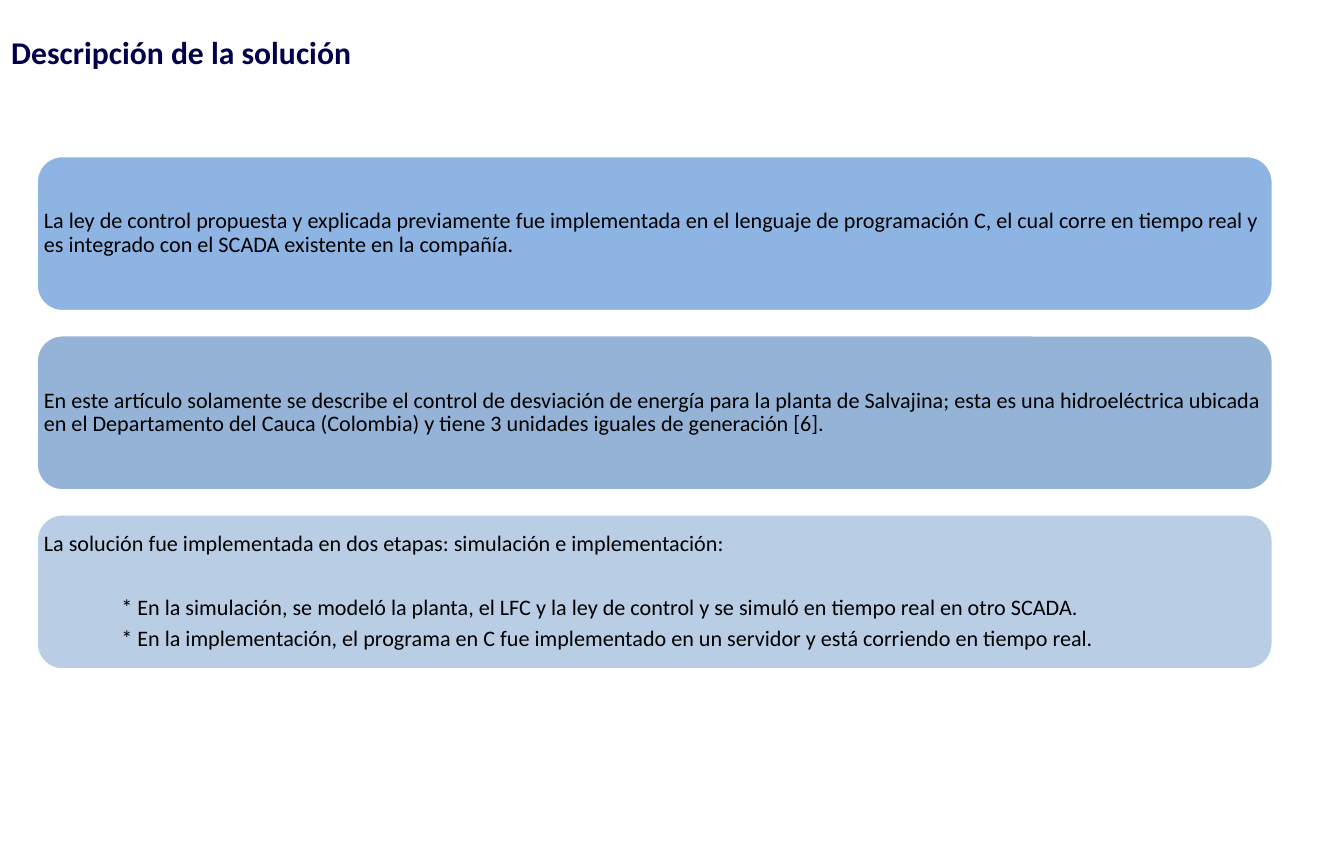
from pptx import Presentation
from pptx.dml.color import RGBColor
from pptx.enum.shapes import MSO_SHAPE
from pptx.enum.text import MSO_ANCHOR, PP_ALIGN
from pptx.util import Pt

FONT = "Calibri"
NAVY = RGBColor(0x00, 0x00, 0x4C)
BLACK = RGBColor(0x00, 0x00, 0x00)
WHITE = RGBColor(0xFF, 0xFF, 0xFF)
SKY_BLUE = RGBColor(0x8E, 0xB4, 0xE3)
STEEL_BLUE = RGBColor(0x95, 0xB3, 0xD7)
PALE_BLUE = RGBColor(0xB9, 0xCD, 0xE5)

PANEL_LEFT, PANEL_TOP = 23, 98.6
PANEL_WIDTH, PANEL_HEIGHT = 782.6, 98.6
PANEL_PITCH = 113.4
STEP_INDENT = 49
PARAGRAPH_GAP = 4.9
INTRO_GAP = 25.2

# Each panel: fill, main text, indented steps
PANELS = [
    (SKY_BLUE,
     "La ley de control propuesta y explicada previamente fue implementada en el "
     "lenguaje de programación C, el cual corre en tiempo real y es integrado con "
     "el SCADA existente en la compañía.", []),
    (STEEL_BLUE,
     "En este artículo solamente se describe el control de desviación de energía "
     "para la planta de Salvajina; esta es una hidroeléctrica ubicada en el "
     "Departamento del Cauca (Colombia) y tiene 3 unidades iguales de generación [6].",
     []),
    (PALE_BLUE,
     "La solución fue implementada en dos etapas: simulación e implementación:",
     ["* En la simulación, se modeló la planta, el LFC y la ley de control y se "
      "simuló en tiempo real en otro SCADA.",
      "* En la implementación, el programa en C fue implementado en un servidor y "
      "está corriendo en tiempo real."]),
]


def set_font(paragraph, size, color, bold=False):
    font = paragraph.font
    font.name = FONT
    font.size = Pt(size)
    font.bold = bold
    font.color.rgb = color


def add_title(slide, text):
    box = slide.shapes.add_textbox(Pt(0), Pt(0), Pt(616.3), Pt(84.2))
    frame = box.text_frame
    frame.word_wrap = True
    frame.vertical_anchor = MSO_ANCHOR.MIDDLE
    # The deeper bottom margin lifts the line above the middle of the box
    frame.margin_bottom = Pt(22)
    paragraph = frame.paragraphs[0]
    paragraph.text = text
    set_font(paragraph, 20, NAVY, bold=True)


def add_panel(slide, top, fill, text, steps):
    shape = slide.shapes.add_shape(
        MSO_SHAPE.ROUNDED_RECTANGLE,
        Pt(PANEL_LEFT), Pt(top), Pt(PANEL_WIDTH), Pt(PANEL_HEIGHT))
    shape.shadow.inherit = False
    shape.fill.solid()
    shape.fill.fore_color.rgb = fill
    shape.line.color.rgb = WHITE
    shape.line.width = Pt(2)

    frame = shape.text_frame
    frame.word_wrap = True
    frame.vertical_anchor = MSO_ANCHOR.MIDDLE
    frame.margin_left = frame.margin_right = Pt(0)
    frame.margin_top = frame.margin_bottom = Pt(0)
    for index, line in enumerate([text] + steps):
        is_step = index > 0
        paragraph = frame.add_paragraph() if is_step else frame.paragraphs[0]
        paragraph.text = line
        paragraph.alignment = PP_ALIGN.LEFT
        paragraph.line_spacing = 0.9
        paragraph.space_after = Pt(INTRO_GAP if steps and not is_step else PARAGRAPH_GAP)
        if is_step:
            paragraph_properties = paragraph._p.get_or_add_pPr()
            paragraph_properties.set("marL", str(Pt(STEP_INDENT)))
        set_font(paragraph, 14, BLACK)


def main():
    presentation = Presentation()
    presentation.slide_width = Pt(850.4)
    presentation.slide_height = Pt(538.6)
    slide = presentation.slides.add_slide(presentation.slide_layouts[6])

    # Heading
    add_title(slide, "Descripción de la solución")

    # Stacked panels
    for row, (fill, text, steps) in enumerate(PANELS):
        add_panel(slide, PANEL_TOP + row * PANEL_PITCH, fill, text, steps)

    presentation.save("out.pptx")


if __name__ == "__main__":
    main()
